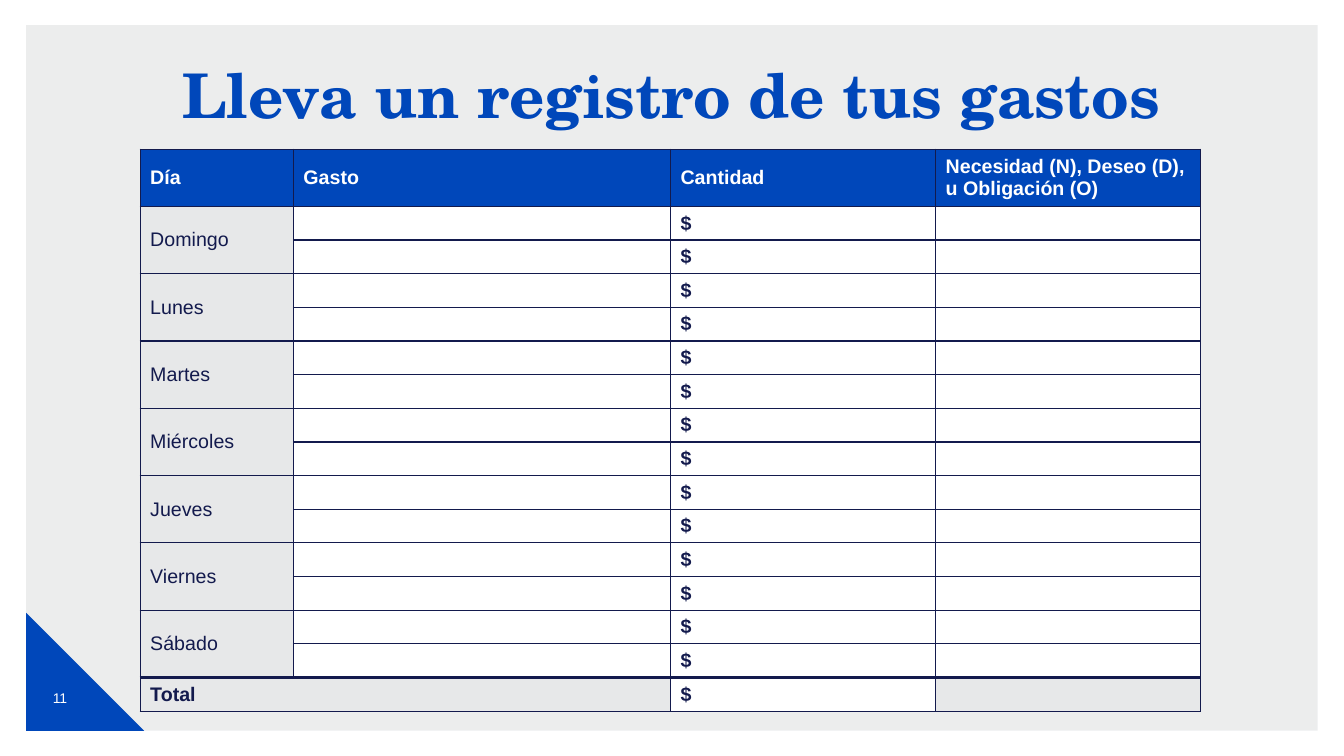
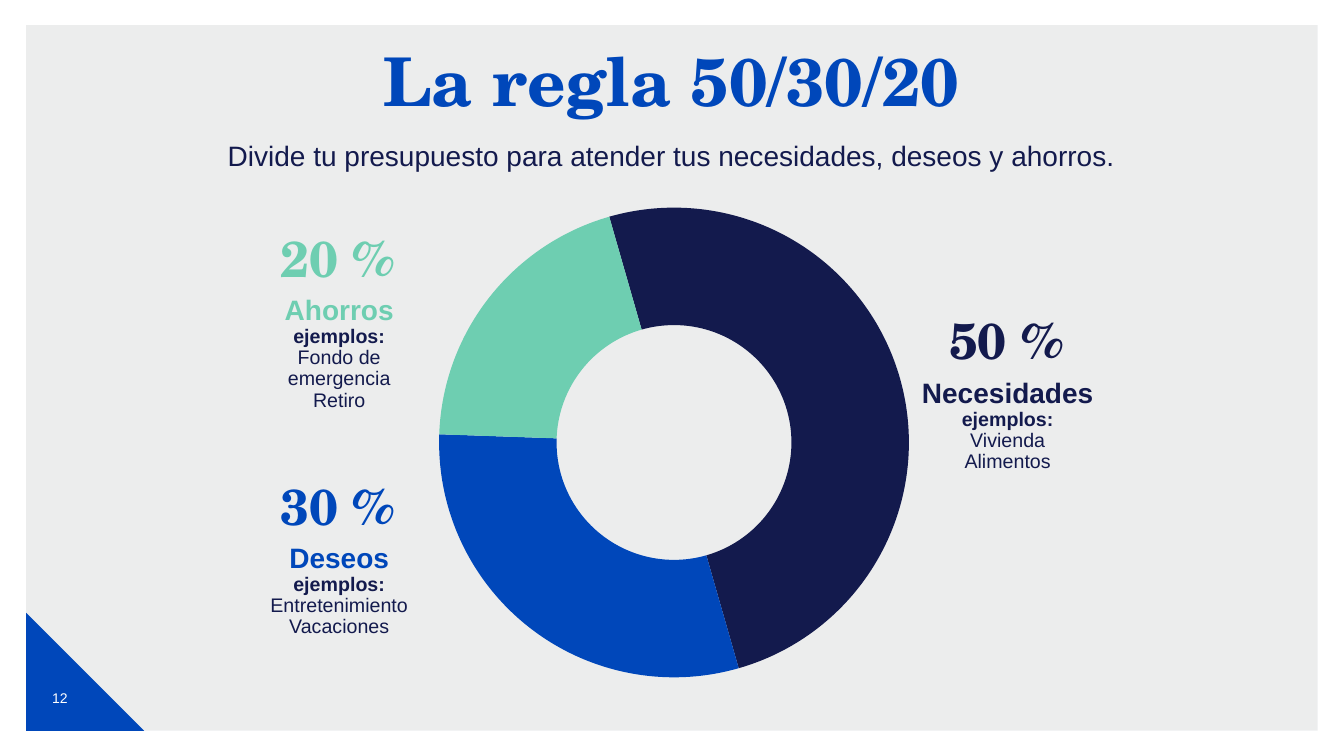
from lxml.etree import SubElement
from pptx import Presentation
from pptx.chart.data import CategoryChartData
from pptx.dml.color import RGBColor
from pptx.enum.chart import XL_CHART_TYPE
from pptx.enum.shapes import MSO_SHAPE
from pptx.enum.text import MSO_ANCHOR, PP_ALIGN
from pptx.oxml.ns import qn
from pptx.util import Inches, Pt

BLUE = RGBColor(0x00, 0x47, 0xBA)
NAVY = RGBColor(0x13, 0x1A, 0x4D)
MINT = RGBColor(0x6E, 0xCE, 0xB1)
PANEL = RGBColor(0xD0, 0xD3, 0xD4)
PALE = RGBColor(0xE7, 0xE8, 0xE9)
WHITE = RGBColor(0xFF, 0xFF, 0xFF)
BODY_FONT = "Arial"
TITLE_FONT = "TeX Gyre Schola"

HEADERS = ["Día", "Gasto", "Cantidad", "Necesidad (N), Deseo (D),\nu Obligación (O)"]
DAYS = ["Domingo", "Lunes", "Martes", "Miércoles", "Jueves", "Viernes", "Sábado"]
ROWS_PER_DAY = 2
COLUMN_WIDTHS = [1.52, 3.74, 2.63, 2.63]
HEADER_HEIGHT, ROW_HEIGHT = 0.54, 0.32
TABLE_TEXT_SIZE = 14

SUBTITLE = "Divide tu presupuesto para atender tus necesidades, deseos y ahorros."
SHARES = [
    (50, "Necesidades", ["Vivienda", "Alimentos"], NAVY, 9.11, 3.09),
    (30, "Deseos", ["Entretenimiento", "Vacaciones"], BLUE, 2.48, 4.73),
    (20, "Ahorros", ["Fondo de emergencia", "Retiro"], MINT, 2.48, 2.27),
]
CHART_WIDTH, CHART_HEIGHT, RING_SIZE = 7.39, 4.94, 4.66


def add_span(para, text, size, color, bold=False, font=BODY_FONT):
    """Add a styled run, breaking the line at each newline."""
    for index, line in enumerate(text.split("\n")):
        if index:
            para.add_line_break()
        span = para.add_run()
        span.text = line
        span.font.name = font
        span.font.size = Pt(size)
        span.font.bold = bold
        span.font.color.rgb = color


def add_text(page, left, top, width, height, lines, spacing=0.9, anchor=MSO_ANCHOR.TOP):
    """Add a centred text box; each line holds the arguments of one run."""
    box = page.shapes.add_textbox(Inches(left), Inches(top), Inches(width), Inches(height))
    frame = box.text_frame
    frame.word_wrap = True
    frame.vertical_anchor = anchor
    frame.margin_left = frame.margin_right = 0
    for index, line in enumerate(lines):
        para = frame.add_paragraph() if index else frame.paragraphs[0]
        para.alignment = PP_ALIGN.CENTER
        para.line_spacing = spacing
        add_span(para, *line)


def add_block(page, shape_type, left, top, width, height, color):
    """Add a flat shape without an outline and return it."""
    block = page.shapes.add_shape(shape_type, Inches(left), Inches(top), Inches(width), Inches(height))
    block.shadow.inherit = False
    block.fill.solid()
    block.fill.fore_color.rgb = color
    block.line.fill.background()
    return block


def add_page(deck, number, title, title_top, title_size):
    """Add a page with the shared panel, corner, number and title."""
    page = deck.slides.add_slide(deck.slide_layouts[6])
    panel = add_block(page, MSO_SHAPE.RECTANGLE, 0.26, 0.25, 12.81, 7, PANEL)
    color = panel._element.spPr.find(qn("a:solidFill"))[0]
    SubElement(color, qn("a:alpha"), val="40000")
    add_block(page, MSO_SHAPE.RIGHT_TRIANGLE, 0.26, 6.08, 1.17, 1.17, BLUE)
    add_text(page, 0.32, 6.63, 0.55, 0.58, [(str(number), 10, WHITE)], 1.0, MSO_ANCHOR.MIDDLE)
    add_text(page, 1.63, title_top, 10.06, 0.67, [(title, title_size, BLUE, True, TITLE_FONT)])
    return page


def style_cell(cell, fill, text="", color=NAVY, bold=False, top_width=1):
    """Give a cell its borders, fill and text."""
    properties = cell._tc.get_or_add_tcPr()
    for side in ("L", "R", "T", "B"):
        width = Pt(top_width if side == "T" else 1)
        border = SubElement(properties, qn(f"a:ln{side}"), w=str(width))
        paint = SubElement(border, qn("a:solidFill"))
        SubElement(paint, qn("a:srgbClr"), val=str(NAVY))
    cell.fill.solid()
    cell.fill.fore_color.rgb = fill
    cell.vertical_anchor = MSO_ANCHOR.MIDDLE
    para = cell.text_frame.paragraphs[0]
    if text:
        add_span(para, text, TABLE_TEXT_SIZE, color, bold)
    SubElement(para._p, qn("a:endParaRPr"), sz=str(TABLE_TEXT_SIZE * 100))


def add_expense_table(page):
    """Add the weekly expense table with two rows a day and a total."""
    total_row = 1 + len(DAYS) * ROWS_PER_DAY
    height = HEADER_HEIGHT + total_row * ROW_HEIGHT
    table = page.shapes.add_table(
        total_row + 1, len(HEADERS), Inches(1.39), Inches(1.48),
        Inches(sum(COLUMN_WIDTHS)), Inches(height),
    ).table
    table.horz_banding = False
    for column, width in zip(table.columns, COLUMN_WIDTHS):
        column.width = Inches(width)
    for index, row in enumerate(table.rows):
        row.height = Inches(ROW_HEIGHT if index else HEADER_HEIGHT)

    for column, header in enumerate(HEADERS):
        style_cell(table.cell(0, column), BLUE, header, WHITE, True)
    for row in range(1, total_row):
        day, repeat = divmod(row - 1, ROWS_PER_DAY)
        style_cell(table.cell(row, 0), PALE, "" if repeat else DAYS[day])
        for column, text in enumerate(["", "$", ""], 1):
            style_cell(table.cell(row, column), WHITE, text, bold=True)
        if not repeat:
            table.cell(row, 0).merge(table.cell(row + ROWS_PER_DAY - 1, 0))
    for column, text in enumerate(["Total", "", "$", ""]):
        fill = WHITE if text == "$" else PALE
        style_cell(table.cell(total_row, column), fill, text, bold=True, top_width=2)
    table.cell(total_row, 0).merge(table.cell(total_row, 1))


def add_ring(page):
    """Add the doughnut chart of the budget shares."""
    data = CategoryChartData()
    data.categories = [str(index) for index in range(1, len(SHARES) + 1)]
    data.add_series("Series 1", [share[0] for share in SHARES])
    chart = page.shapes.add_chart(
        XL_CHART_TYPE.DOUGHNUT, Inches(2.99), Inches(1.92),
        Inches(CHART_WIDTH), Inches(CHART_HEIGHT), data,
    ).chart
    chart.has_legend = False
    chart.has_title = False
    chart.font.name = BODY_FONT
    chart.font.size = Pt(10)
    chart.font.color.rgb = NAVY
    plot = chart.plots[0]
    plot.vary_by_categories = True
    for index, share in enumerate(SHARES):
        point = plot.series[0].points[index].format
        point.fill.solid()
        point.fill.fore_color.rgb = share[3]
        point.line.fill.background()

    area = chart._chartSpace.chart.plotArea
    for tag, value in (("c:firstSliceAng", "344"), ("c:holeSize", "70")):
        next(area.iter(qn(tag))).set("val", value)
    for layout in area.findall(qn("c:layout")):
        area.remove(layout)
    layout = SubElement(area, qn("c:layout"))
    area.insert(0, layout)
    manual = SubElement(layout, qn("c:manualLayout"))
    width, height = RING_SIZE / CHART_WIDTH, RING_SIZE / CHART_HEIGHT
    settings = {
        "layoutTarget": "inner", "xMode": "edge", "yMode": "edge",
        "x": (1 - width) / 2, "y": (1 - height) / 2, "w": width, "h": height,
    }
    for name, value in settings.items():
        SubElement(manual, qn(f"c:{name}"), val=str(value))


def add_share_label(page, percent, name, examples, color, left, top):
    """Add the percentage of a share with its name and examples below."""
    add_text(page, left, top, 1.74, 0.67, [(f"{percent} %", 36, color, True, TITLE_FONT)])
    lines = [(name, 20, color, True), ("ejemplos:", 14, NAVY, True)]
    lines += [(example, 14, NAVY) for example in examples]
    add_text(page, left, top + 0.62, 1.77, 1.35, lines)


def main():
    """Build both pages and save the deck."""
    deck = Presentation()
    deck.slide_width, deck.slide_height = Inches(13.33), Inches(7.5)

    page = add_page(deck, 11, "Lleva un registro de tus gastos", 0.6, 44)
    add_expense_table(page)

    page = add_page(deck, 12, "La regla 50/30/20", 0.43, 48)
    add_text(page, 1.63, 1.39, 10.06, 0.38, [(SUBTITLE, 20, NAVY)], 0.8)
    add_ring(page)
    for share in SHARES:
        add_share_label(page, *share)

    deck.save("out.pptx")


if __name__ == "__main__":
    main()
